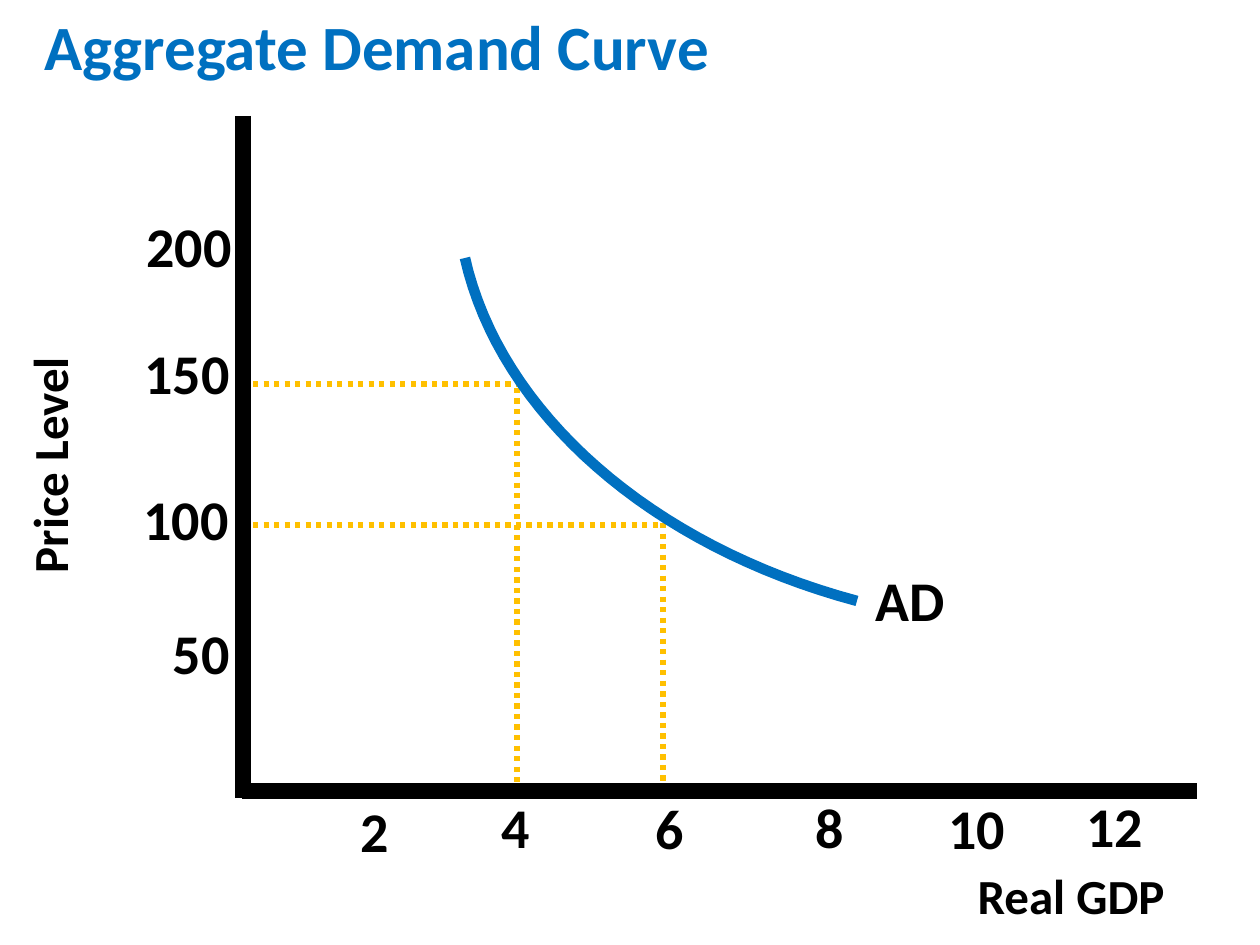
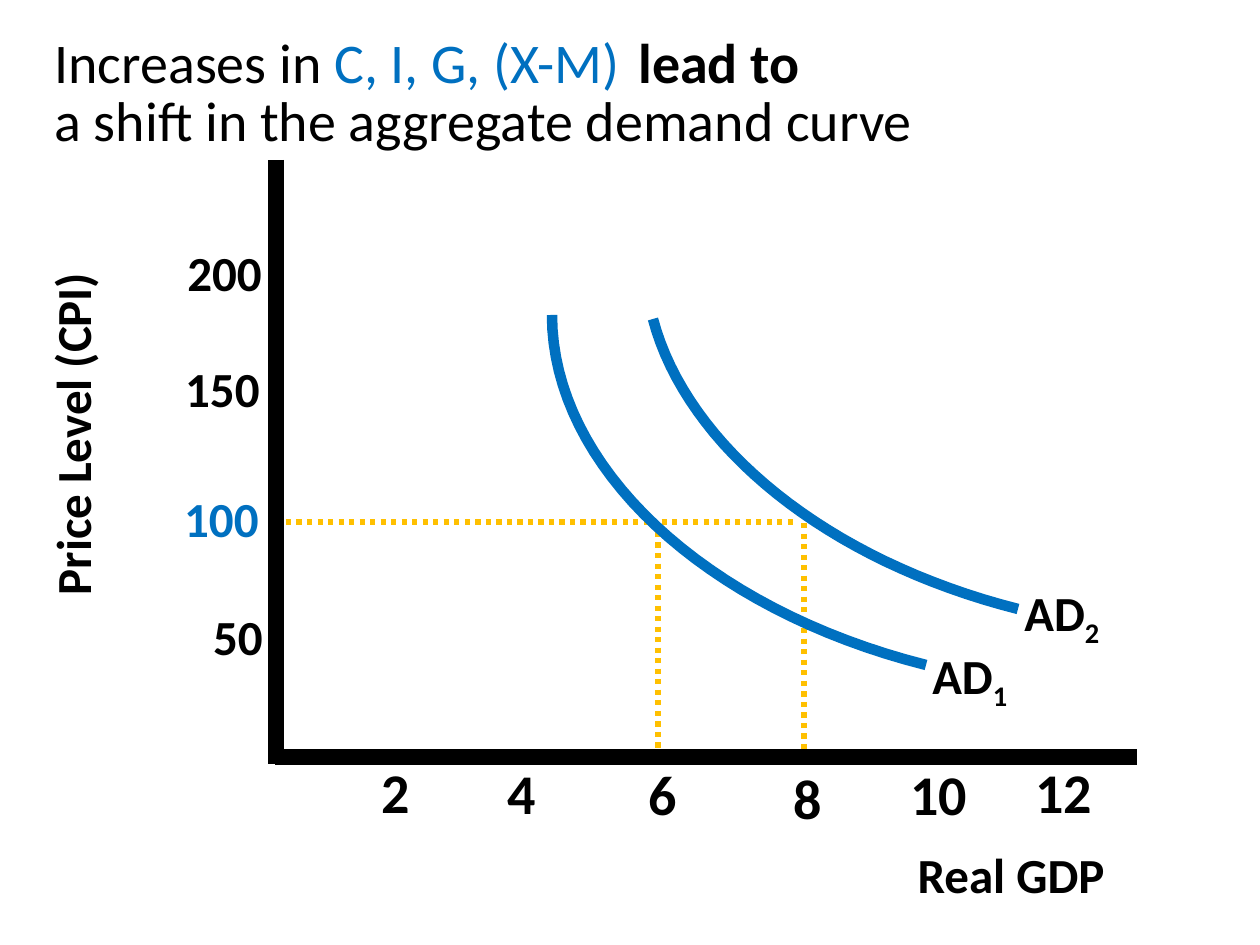
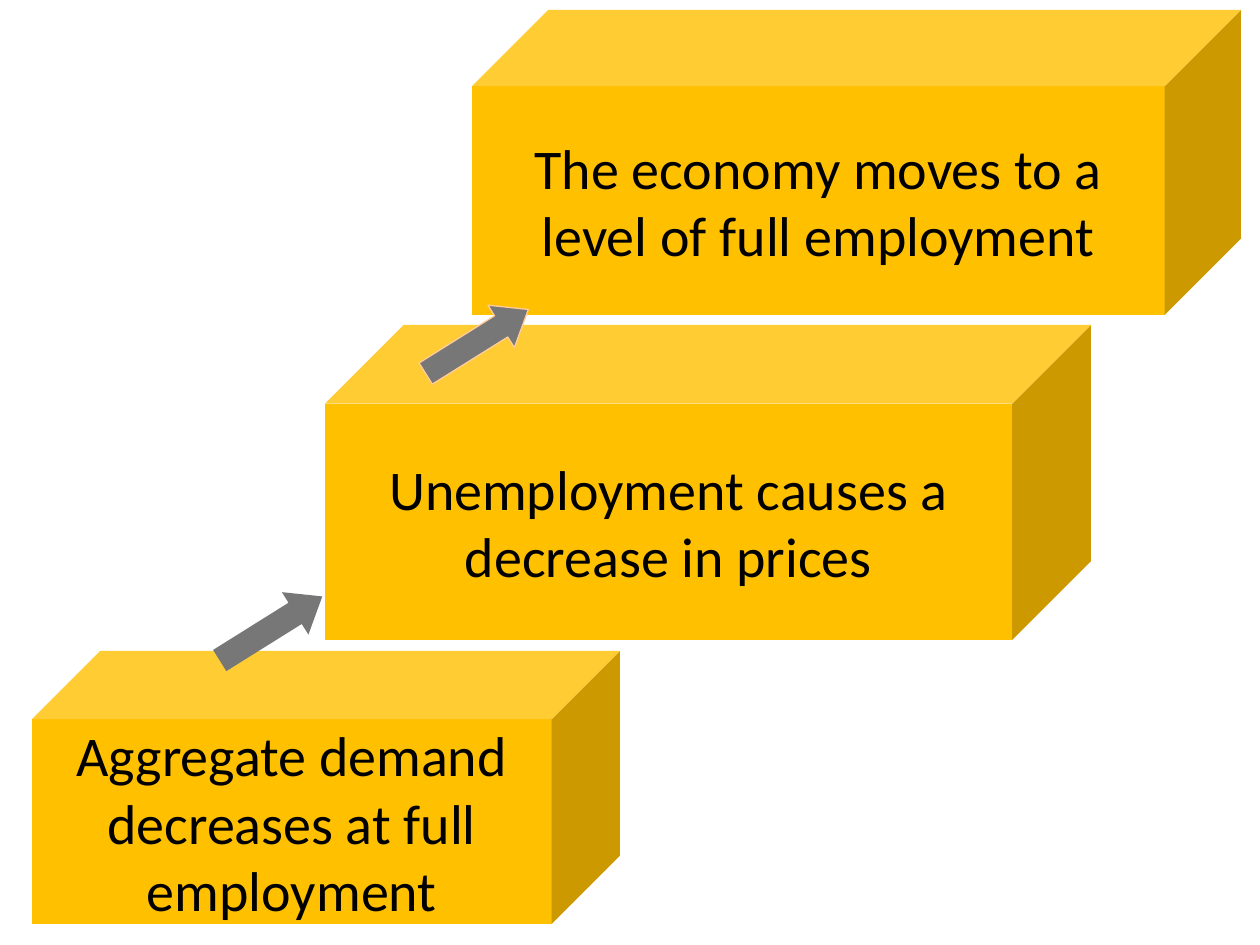
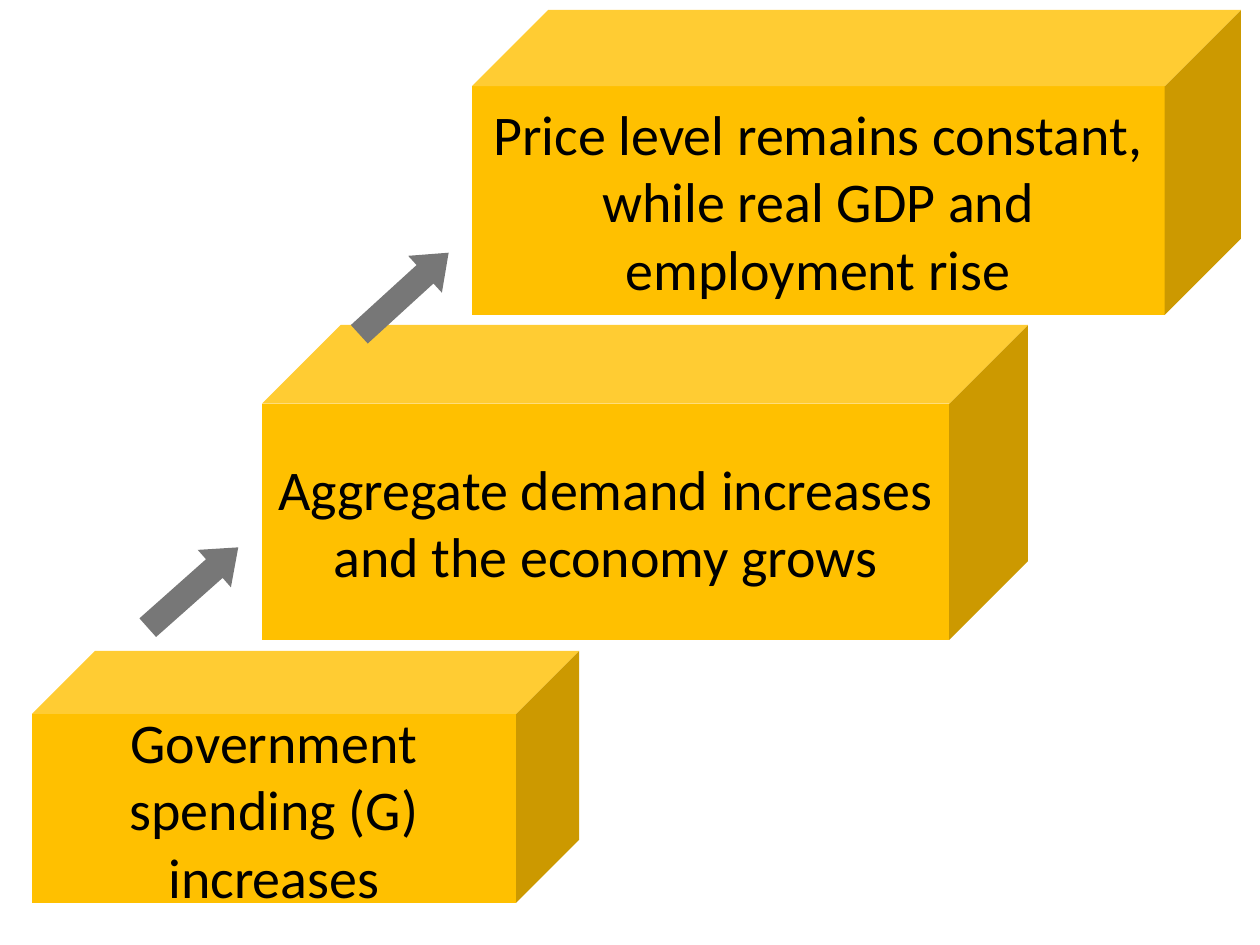
import pptx
import pptx.util
import pptx.dml.color
import pptx.enum.dml
import pptx.enum.shapes
import pptx.enum.text
import pptx.oxml.ns
from lxml import etree

RGB = pptx.dml.color.RGBColor
BLACK = RGB(0x00, 0x00, 0x00)
WHITE = RGB(0xFF, 0xFF, 0xFF)
BLUE = RGB(0x00, 0x70, 0xC0)
GOLD = RGB(0xFF, 0xC0, 0x00)
GREY = RGB(0x77, 0x77, 0x77)
PEACH = RGB(0xFF, 0xCC, 0x99)

ALIGN = pptx.enum.text.PP_ALIGN
SHAPE = pptx.enum.shapes.MSO_SHAPE
FONT = "Calibri"
SCALE = 914400 / 126
PAGE_WIDTH, PAGE_HEIGHT = 1260, 945
CURVE_STEPS = 32
AXIS_WEIGHT, CURVE_WEIGHT, GUIDE_WEIGHT = 9, 6, 3
ARROW_WIDTH, ARROW_HEIGHT = 50, 121
BOX_HEIGHT = {28: 66, 32: 74, 36: 82}
STEP_INSET = 69

# Ticks are (text, left, top, width, colour); lines are (x1, y1, x2, y2).
DEMAND = {
    "guides": [(663, 523, 663, 798), (253, 525, 663, 525),
               (517, 388, 517, 798), (253, 384, 517, 384)],
    "axes": [(243, 116, 243, 798), (242, 791, 1197, 791)],
    "price_size": 32,
    "price_align": ALIGN.RIGHT,
    "prices": [("200", 94, 213, 150, BLACK), ("150", 77, 340, 165, BLACK),
               ("100", 89, 486, 152, BLACK), ("50", 110, 620, 132, BLACK)],
    "outputs": [("2", 328, 798, 94, BLACK), ("4", 474, 794, 84, BLACK),
                ("6", 633, 795, 73, BLACK), ("8", 788, 794, 84, BLACK),
                ("10", 924, 795, 105, BLACK), ("12", 1062, 793, 105, BLACK)],
    "curves": [[(857, 601), (651, 546), (500, 413), (465, 258)]],
    "curve_size": 32,
    "curve_names": [("AD", "", 863, 567, 179)],
    "price_title": ("Price Level", -115, 432, 335),
    "output_title": ("Real GDP", 945, 866, 252),
}
SHIFT = {
    "guides": [(804, 523, 804, 764), (658, 532, 658, 764),
               (651, 522, 798, 522), (286, 522, 651, 522)],
    "axes": [(276, 160, 276, 764), (275, 757, 1137, 757)],
    "price_size": 28,
    "price_align": ALIGN.CENTER,
    "prices": [("200", 168, 243, 113, BLACK), ("150", 160, 359, 125, BLACK),
               ("100", 160, 489, 123, BLUE), ("50", 188, 607, 100, BLACK)],
    "outputs": [("2", 353, 759, 86, BLACK), ("4", 484, 760, 76, BLACK),
                ("6", 629, 761, 67, BLACK), ("8", 770, 765, 76, BLACK),
                ("10", 891, 761, 95, BLACK), ("12", 1016, 759, 95, BLACK)],
    "curves": [[(926, 665), (704, 609), (552, 466), (552, 315)],
               [(1018, 609), (828, 561), (687, 447), (653, 319)]],
    "curve_size": 28,
    "curve_names": [("AD", "1", 920, 640, 151), ("AD", "2", 1012, 577, 142)],
    "price_title": ("Price Level (CPI)", -115, 401, 381),
    "output_title": ("Real GDP", 864, 845, 294),
}
SHIFT_HEADINGS = [
    ([("Increases in ", BLACK), ("C, I, G, (X-M)", BLUE)], 42, 21, 672, False),
    ([("a shift in the aggregate demand curve", BLACK)], 42, 79, 1029, False),
    ([("lead to", BLACK)], 626, 21, 236, True),
]
# Steps are (text, place, vertical inset); arrows are (left, top, angle, outline).
UNEMPLOYMENT = {
    "steps": [
        ("Aggregate demand decreases at full employment", (32, 651, 588, 273), 6),
        ("Unemployment causes a decrease in prices", (325, 325, 766, 315), STEP_INSET),
        ("The economy moves to a level of full employment", (472, 10, 769, 305), STEP_INSET),
    ],
    "arrows": [(246, 568, 58, None), (452, 281, 58, PEACH)],
}
SPENDING = {
    "steps": [
        ("Government spending (G) increases", (32, 651, 547, 252), 6),
        ("Aggregate demand increases and the economy grows", (262, 325, 766, 315), STEP_INSET),
        ("Price level remains constant, while real GDP and employment rise",
         (472, 10, 769, 305), STEP_INSET),
    ],
    "arrows": [(168, 527, 48.4, None), (379, 233, 47.6, None)],
}


def px(length):
    return pptx.util.Emu(round(length * SCALE))


def style_span(span, size, colour, bold):
    span.font.name = FONT
    span.font.size = pptx.util.Pt(size)
    span.font.bold = bold
    span.font.color.rgb = colour


def add_label(page, spans, left, top, width, size, bold=True, align=ALIGN.LEFT, spacing=0.9):
    """Add a one-line text box from (text, colour) spans."""
    box = page.shapes.add_textbox(px(left), px(top), px(width), px(BOX_HEIGHT[size]))
    frame = box.text_frame
    frame.word_wrap = True
    frame.auto_size = pptx.enum.text.MSO_AUTO_SIZE.SHAPE_TO_FIT_TEXT
    para = frame.paragraphs[0]
    para.alignment = align
    para.line_spacing = spacing
    for text, colour in spans:
        span = para.add_run()
        span.text = text
        style_span(span, size, colour, bold)
    return box


def add_line(page, ends, colour, weight, dash=None):
    line = page.shapes.add_connector(
        pptx.enum.shapes.MSO_CONNECTOR.STRAIGHT, *[px(value) for value in ends])
    line.line.color.rgb = colour
    line.line.width = pptx.util.Pt(weight)
    if dash:
        line.line.dash_style = dash
    etree.SubElement(line._element.spPr, pptx.oxml.ns.qn("a:effectLst"))


def bezier(controls, t):
    """Return the point at t on a cubic curve, in EMU."""
    weights = ((1 - t) ** 3, 3 * t * (1 - t) ** 2, 3 * t * t * (1 - t), t ** 3)
    return tuple(px(sum(w * c for w, c in zip(weights, axis))) for axis in zip(*controls))


def add_curve(page, controls):
    points = [bezier(controls, step / CURVE_STEPS) for step in range(CURVE_STEPS + 1)]
    builder = page.shapes.build_freeform(*points[0], scale=1.0)
    builder.add_line_segments(points[1:], close=False)
    curve = builder.convert_to_shape()
    curve.shadow.inherit = False
    curve.fill.background()
    curve.line.color.rgb = BLUE
    curve.line.width = pptx.util.Pt(CURVE_WEIGHT)


def draw_graph(page, graph):
    for ends in graph["guides"]:
        add_line(page, ends, GOLD, GUIDE_WEIGHT, pptx.enum.dml.MSO_LINE.ROUND_DOT)
    for ends in graph["axes"]:
        add_line(page, ends, BLACK, AXIS_WEIGHT)
    tick_sets = [(graph["prices"], graph["price_size"], graph["price_align"]),
                 (graph["outputs"], 32, ALIGN.CENTER)]
    for ticks, size, align in tick_sets:
        for text, left, top, width, colour in ticks:
            add_label(page, [(text, colour)], left, top, width, size, align=align)
    for controls in graph["curves"]:
        add_curve(page, controls)
    for name, index, *place in graph["curve_names"]:
        spans = [(text, BLACK) for text in (name, index) if text]
        box = add_label(page, spans, *place, graph["curve_size"])
        for subscript in box.text_frame.paragraphs[0].runs[1:]:
            subscript.font._element.set("baseline", "-25000")
    for key, angle in (("price_title", 270), ("output_title", 0)):
        text, *place = graph[key]
        box = add_label(page, [(text, BLACK)], *place, 28, align=ALIGN.CENTER)
        box.rotation = angle


def add_solid(page, kind, place, colour):
    """Add a preset shape with a plain fill and no outline."""
    shape = page.shapes.add_shape(kind, *[px(value) for value in place])
    shape.shadow.inherit = False
    shape.fill.solid()
    shape.fill.fore_color.rgb = colour
    shape.line.fill.background()
    return shape


def draw_staircase(page, stairs):
    for text, place, inset in stairs["steps"]:
        cube = add_solid(page, SHAPE.CUBE, place, GOLD)
        cube.adjustments[0] = 0.25
        frame = cube.text_frame
        frame.word_wrap = True
        frame.vertical_anchor = pptx.enum.text.MSO_ANCHOR.MIDDLE
        frame.margin_top = frame.margin_bottom = px(inset)
        frame.text = text
        para = frame.paragraphs[0]
        para.alignment = ALIGN.CENTER
        style_span(para.runs[0], 32, BLACK, False)
    for left, top, angle, outline in stairs["arrows"]:
        arrow = add_solid(page, SHAPE.UP_ARROW, (left, top, ARROW_WIDTH, ARROW_HEIGHT), GREY)
        arrow.adjustments[0] = 0.5
        arrow.adjustments[1] = 0.64
        arrow.rotation = angle
        if outline is not None:
            arrow.line.color.rgb = outline
            arrow.line.width = pptx.util.Pt(0.75)


def main():
    deck = pptx.Presentation()
    deck.slide_width, deck.slide_height = px(PAGE_WIDTH), px(PAGE_HEIGHT)
    blank = deck.slide_layouts[6]

    page = deck.slides.add_slide(blank)
    draw_graph(page, DEMAND)
    title = add_label(page, [("Aggregate Demand Curve", BLUE)], 32, 10, 882, 36)
    title.fill.solid()
    title.fill.fore_color.rgb = WHITE

    page = deck.slides.add_slide(blank)
    draw_graph(page, SHIFT)
    for spans, left, top, width, bold in SHIFT_HEADINGS:
        add_label(page, spans, left, top, width, 32, bold, spacing=1.0)

    for stairs in (UNEMPLOYMENT, SPENDING):
        draw_staircase(deck.slides.add_slide(blank), stairs)
    deck.save("out.pptx")


if __name__ == "__main__":
    main()
